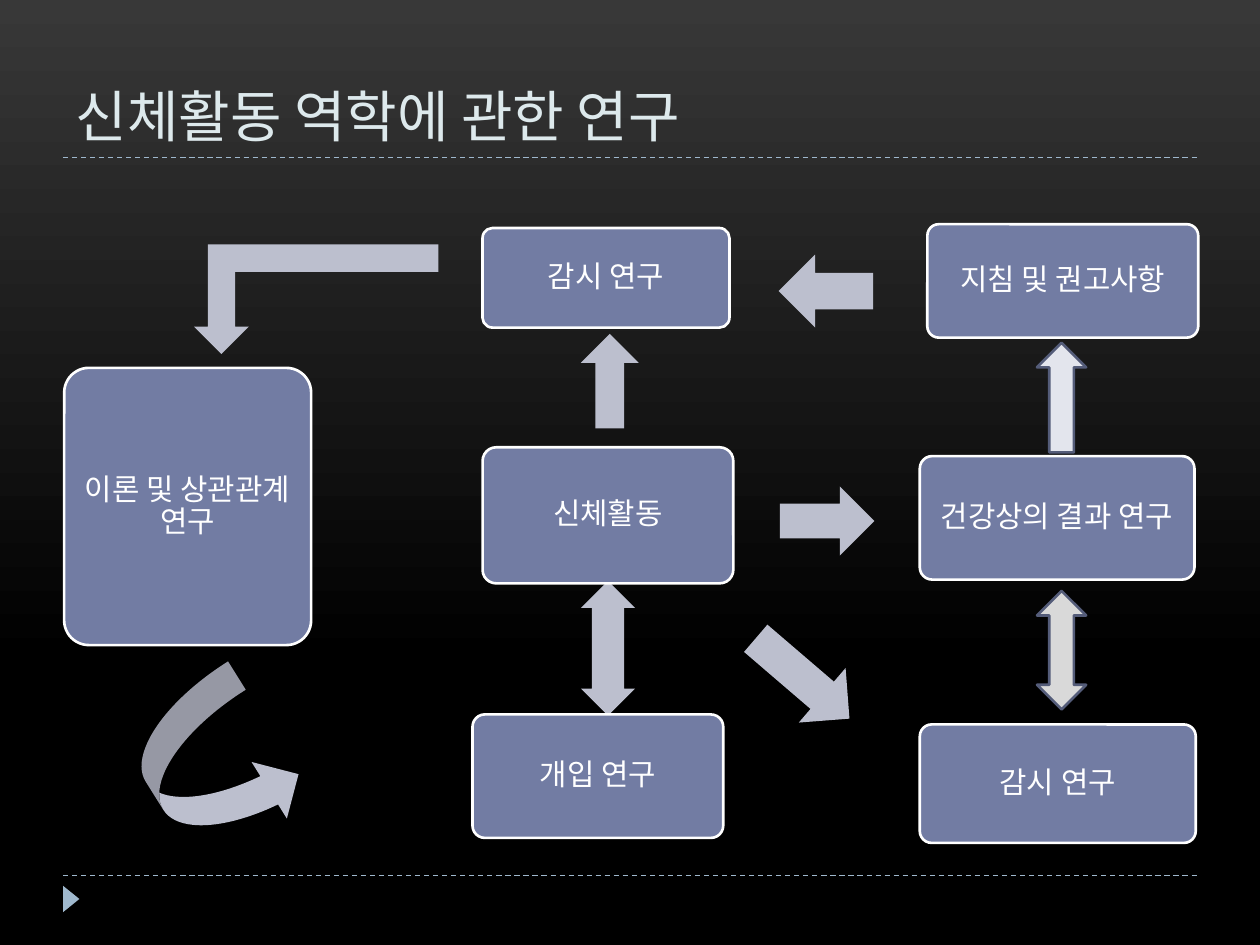
import pptx
import pptx.dml.color
import pptx.enum.dml
import pptx.enum.shapes
import pptx.enum.text
import pptx.oxml
import pptx.oxml.ns
import pptx.util
from pptx.util import Inches

SHAPES = pptx.enum.shapes.MSO_SHAPE
ALIGN = pptx.enum.text.PP_ALIGN
ANCHOR = pptx.enum.text.MSO_ANCHOR
BLUE, PALE, EDGE, RULE = "727CA3", "BCBFCE", "545C79", "9FB8CD"


def color(value):
    """Turn a hex string into a colour."""
    return pptx.dml.color.RGBColor.from_string(value)


def write(frame, text, size, font, ink, align, anchor, inset=0.1, spacing=1.0):
    """Put formatted text into a text frame."""
    frame.word_wrap = True
    frame.auto_size = pptx.enum.text.MSO_AUTO_SIZE.NONE
    frame.vertical_anchor = anchor
    frame.margin_left = frame.margin_right = Inches(inset)
    frame.margin_top = frame.margin_bottom = Inches(min(inset, 0.07))
    para = frame.paragraphs[0]
    para.alignment = align
    para.line_spacing = spacing
    span = para.add_run()
    span.text = text
    span.font.size = pptx.util.Pt(size)
    span.font.name = font
    span.font.color.rgb = color(ink)


def add_shape(page, kind, box, fill, line=None, turn=0, flip=False, adjust=()):
    """Add a filled preset shape in a box given in inches."""
    shape = page.shapes.add_shape(kind, *map(Inches, box))
    shape.shadow.inherit = False
    shape.rotation = turn
    shape.fill.solid()
    shape.fill.fore_color.rgb = color(fill)
    if line:
        shape.line.color.rgb = color(line)
        shape.line.width = pptx.util.Pt(1.5)
    else:
        shape.line.fill.background()
    if flip:
        shape._element.spPr.find(pptx.oxml.ns.qn("a:xfrm")).set("flipV", "1")
    for index, value in enumerate(adjust):
        shape.adjustments[index] = value
    return shape


def add_rule(page, left, top, width):
    """Draw a dashed horizontal rule."""
    rule = page.shapes.add_connector(
        pptx.enum.shapes.MSO_CONNECTOR.STRAIGHT,
        Inches(left), Inches(top), Inches(left + width), Inches(top))
    rule.line.color.rgb = color(RULE)
    rule.line.width = pptx.util.Pt(0.75)
    rule.line.dash_style = pptx.enum.dml.MSO_LINE.DASH
    rule._element.spPr.append(pptx.oxml.parse_xml(
        f'<a:effectLst {pptx.oxml.ns.nsdecls("a")}/>'))


def add_frame(page, left, top, width, height):
    """Paint the background, the two rules and the corner marker."""
    fill = page.background.fill
    fill.gradient()
    fill.gradient_angle = 90
    for stop, (position, value) in zip(fill.gradient_stops, [(0.3, "000000"), (1, "383838")]):
        stop.position = position
        stop.color.rgb = color(value)
    add_rule(page, left, top, width)
    add_rule(page, left, top + height, width)
    add_shape(page, SHAPES.ISOSCELES_TRIANGLE,
              (left - 0.04, top + height + 0.12, 0.21, 0.13), RULE, turn=90)


def add_title(page, text, left, top, width, height):
    """Move and format the title placeholder."""
    title = page.shapes.title
    title.left, title.top, title.width, title.height = map(Inches, (left, top, width, height))
    write(title.text_frame, text, 32, "Roboto Slab", "DDE9EC", ALIGN.LEFT, ANCHOR.BOTTOM)


def add_diagram(page, left, top):
    """Place the study boxes and the arrows between them."""
    def placed(x, y, width, height):
        """Shift a box from the diagram's corner."""
        return left + x, top + y, width, height

    arrows = [
        (SHAPES.LEFT_RIGHT_ARROW, (3.79, 3.15, 1.07, 0.43), PALE,
         dict(turn=90, adjust=(0.6, 0.5))),
        (SHAPES.RIGHT_ARROW, (5.38, 3.32, 0.98, 0.57), PALE, dict(turn=40.6)),
        (SHAPES.UP_ARROW, (4.11, 0.87, 0.46, 0.75), PALE, {}),
        (SHAPES.CURVED_LEFT_ARROW, (0.68, 3.65, 1.06, 1.32), PALE, dict(turn=148, flip=True)),
        (SHAPES.LEFT_ARROW, (5.68, 0.24, 0.75, 0.58), PALE, {}),
        (SHAPES.BENT_UP_ARROW, (1.04, 0.16, 1.94, 0.87), PALE, dict(turn=180)),
        (SHAPES.RIGHT_ARROW, (5.69, 2.08, 0.75, 0.55), PALE, {}),
        (SHAPES.RIGHT_ARROW, (7.49, 1.18, 0.87, 0.39), "E3E5ED", dict(turn=270, line=EDGE)),
        (SHAPES.UP_DOWN_ARROW, (7.73, 2.91, 0.39, 0.94), "D9D9D9", dict(line=EDGE)),
    ]
    studies = [
        ("이론 및 상관관계 연구", (0.01, 1.14, 1.96, 2.2)),
        ("감시 연구", (3.33, 0.03, 1.96, 0.79)),
        ("신체활동", (3.33, 1.77, 1.99, 1.08)),
        ("개입 연구", (3.25, 3.89, 1.99, 0.98)),
        ("지침 및 권고사항", (6.86, 0, 2.15, 0.9)),
        ("건강상의 결과 연구", (6.8, 1.84, 2.18, 0.98)),
        ("감시 연구", (6.8, 3.97, 2.19, 0.94)),
    ]
    for kind, box, fill, style in arrows:
        add_shape(page, kind, placed(*box), fill, **style)
    for text, box in studies:
        shape = add_shape(page, SHAPES.ROUNDED_RECTANGLE, placed(*box), BLUE, "FFFFFF",
                          adjust=(0.1,))
        write(shape.text_frame, text, 17, "Calibri", "FFFFFF", ALIGN.CENTER, ANCHOR.MIDDLE,
              inset=0.07, spacing=0.9)


def main():
    """Build and save the deck."""
    deck = pptx.Presentation()
    deck.slide_width, deck.slide_height = Inches(10), Inches(7.5)
    page = deck.slides.add_slide(deck.slide_layouts.get_by_name("Title Only"))
    add_frame(page, 0.5, 1.25, 9, 5.7)
    add_title(page, "신체활동 역학에 관한 연구", 0.5, 0.17, 9, 1.08)
    add_diagram(page, 0.5, 1.78)
    deck.save("out.pptx")


if __name__ == "__main__":
    main()
